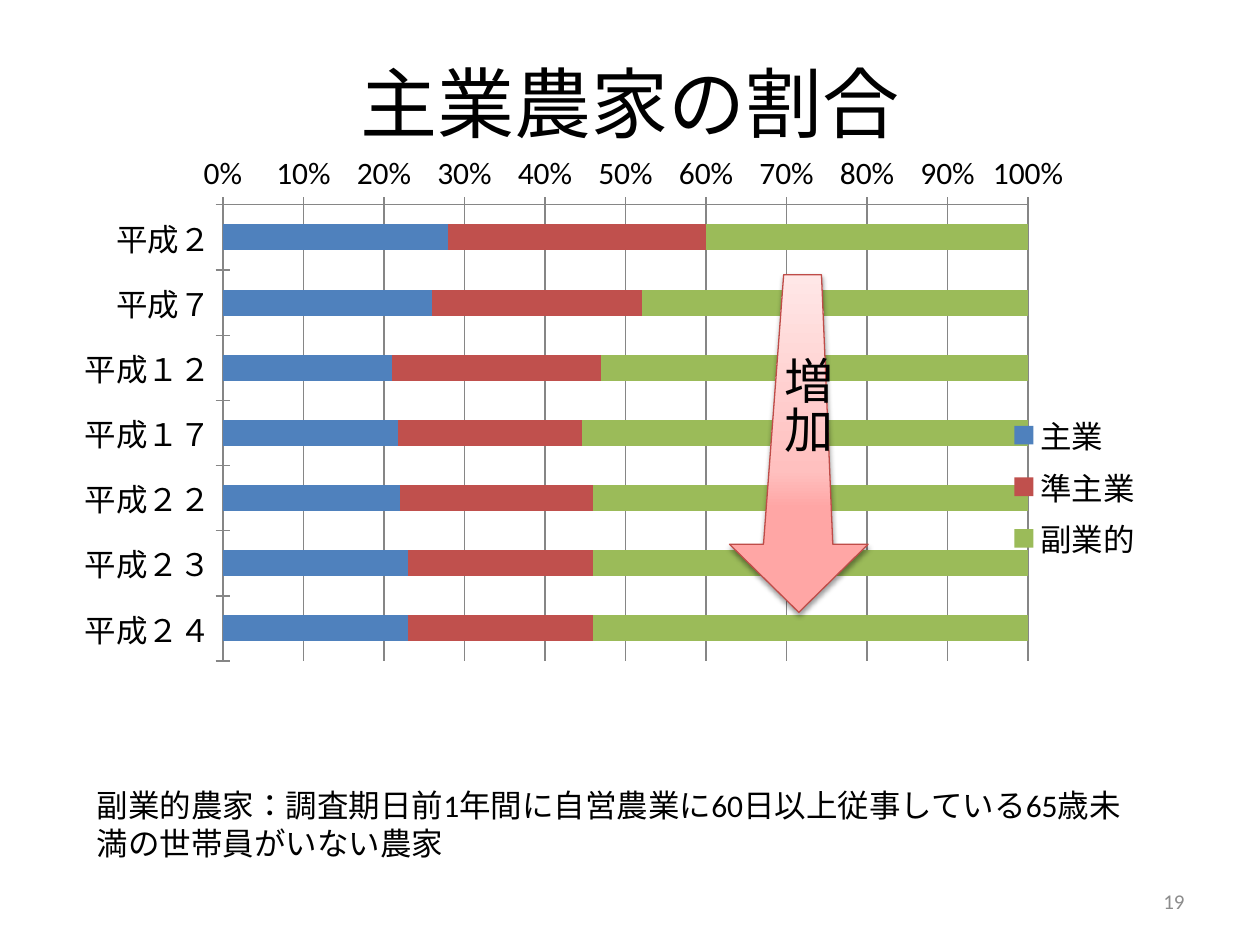
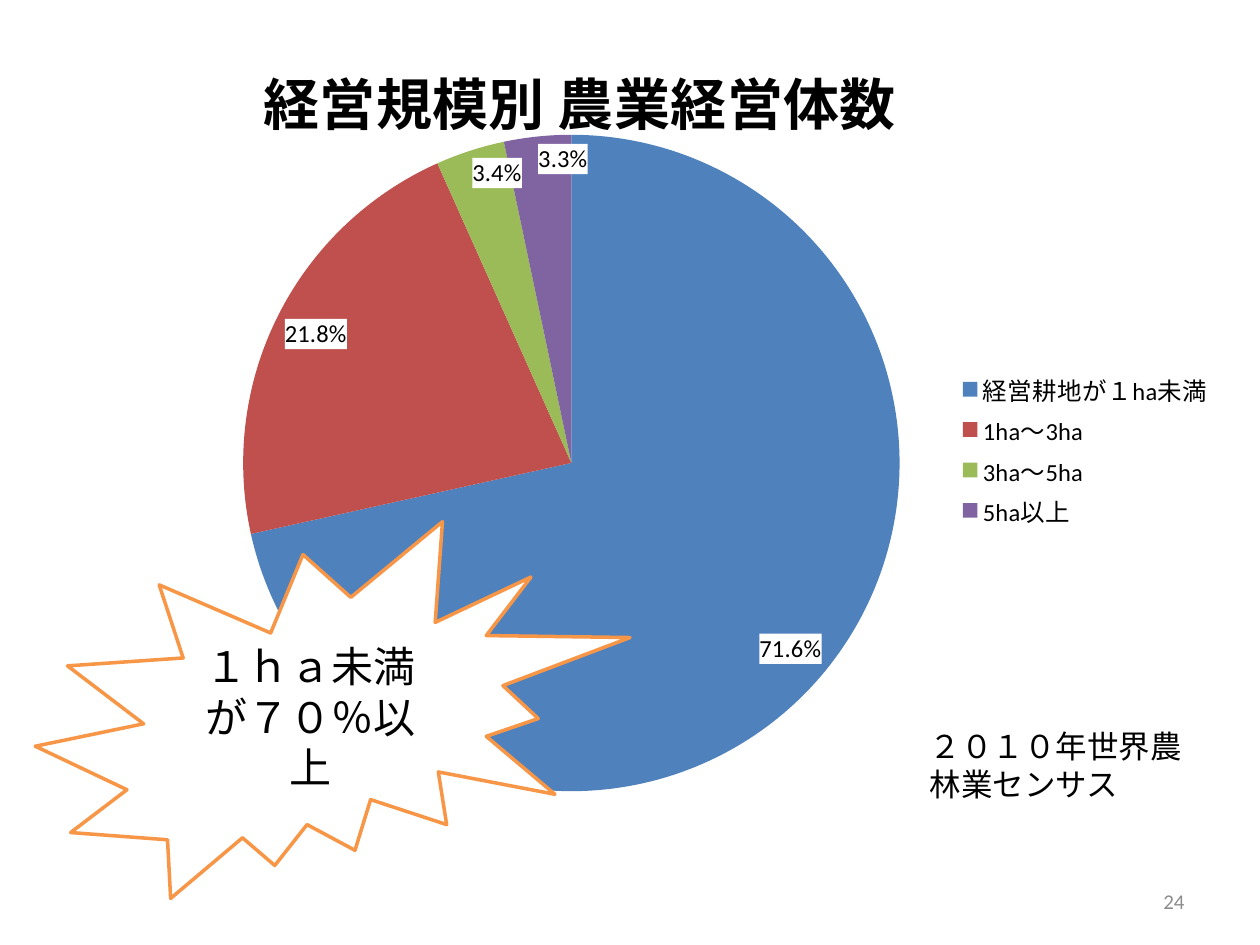
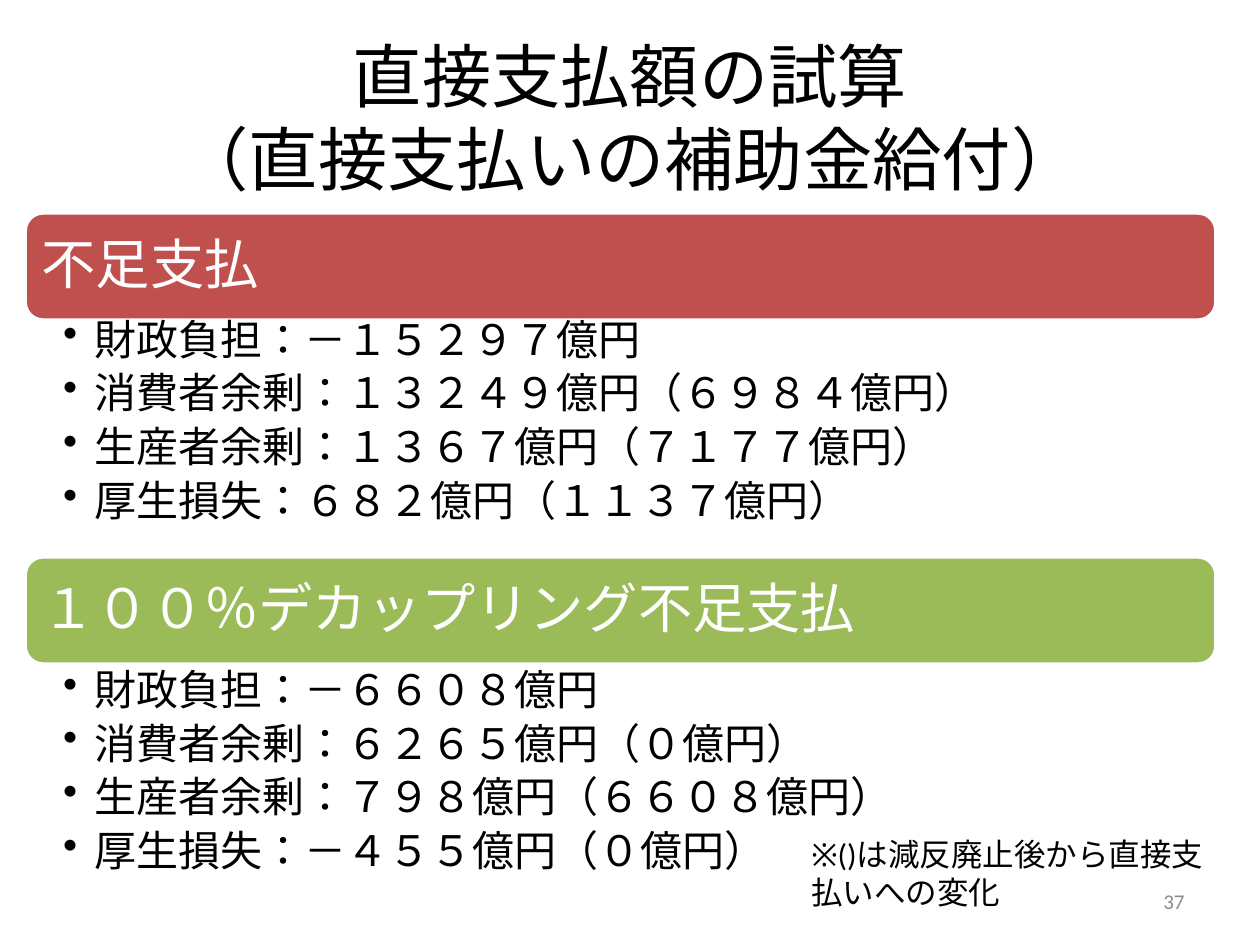
from dataclasses import dataclass

from lxml import etree
from pptx import Presentation
from pptx import util as u
from pptx.chart.data import CategoryChartData
from pptx.dml.color import RGBColor
from pptx.enum import chart as charts, lang, shapes, text
from pptx.oxml import parse_xml
from pptx.oxml.ns import nsdecls, qn


@dataclass(frozen=True)
class Theme:
    font: str = "Calibri"
    black: str = "000000"
    white: str = "FFFFFF"
    gray: str = "8C8C8C"
    axis: str = "868686"
    blue: str = "4F81BD"
    red: str = "C0504D"
    green: str = "9BBB59"
    purple: str = "8064A2"
    orange: str = "F79646"
    arrow_line: str = "BF4C48"
    arrow_stops: tuple = ((31, "FFA6A5"), (42, "FFC0BF"), (100, "FFE7E7"))
    title: float = 44
    chart_title: float = 32
    heading: float = 31
    callout: float = 28
    body: float = 24
    note: float = 18
    label: float = 14
    small: float = 12


THEME = Theme()
SERIES_COLORS = (THEME.blue, THEME.red, THEME.green, THEME.purple)


def color(value):
    return RGBColor.from_string(value)


def inches(box):
    return [u.Inches(value) for value in box]


def style_font(font, size, value=THEME.black):
    font.name, font.size = THEME.font, u.Pt(size)
    font.color.rgb = color(value)
    font.language_id = lang.MSO_LANGUAGE_ID.JAPANESE


def write(shape, lines, size, value=THEME.black, align=text.PP_ALIGN.LEFT,
          anchor=text.MSO_ANCHOR.TOP, insets=None, spacing=None):
    """Fill a shape with one paragraph per line."""
    frame = shape.text_frame
    frame.word_wrap, frame.vertical_anchor = True, anchor
    if insets:
        (frame.margin_left, frame.margin_top,
         frame.margin_right, frame.margin_bottom) = inches(insets)
    frame.text = "\n".join(lines)
    for paragraph in frame.paragraphs:
        paragraph.alignment = align
        paragraph.line_spacing = spacing
        style_font(paragraph.font, size, value)


def add_text(slide, box, lines, size, **options):
    shape = slide.shapes.add_textbox(*inches(box))
    write(shape, lines, size, **options)
    return shape


def add_panel(slide, kind, box, fill, line):
    shape = slide.shapes.add_shape(kind, *inches(box))
    shape.shadow.inherit = False
    shape.fill.solid()
    shape.fill.fore_color.rgb = color(fill)
    shape.line.color.rgb = color(line)
    shape.line.width = u.Pt(2)
    return shape


def add_title(slide, box, title, size=THEME.title):
    add_text(slide, box, [title], size, anchor=text.MSO_ANCHOR.MIDDLE,
             align=text.PP_ALIGN.CENTER)


def add_page_number(slide, number):
    add_text(slide, (7.17, 6.95, 2.33, 0.4), [str(number)], THEME.small,
             value=THEME.gray, align=text.PP_ALIGN.RIGHT,
             anchor=text.MSO_ANCHOR.MIDDLE)


# Chart helpers

def place(element, part_box, chart_box, inner=False, after=None):
    """Position a chart part, given in inches from the chart's corner."""
    target = '<c:layoutTarget val="inner"/>' if inner else ""
    values = "".join(
        f'<c:{key} val="{length / chart_box[2 + index % 2]}"/>'
        for index, (key, length) in enumerate(zip("xywh", part_box)))
    layout = parse_xml(
        f"<c:layout {nsdecls('c')}><c:manualLayout>{target}"
        f'<c:xMode val="edge"/><c:yMode val="edge"/>{values}'
        "</c:manualLayout></c:layout>")
    old = element.find(qn("c:layout"))
    if old is not None:
        element.remove(old)
    if after:
        element.find(qn(after)).addnext(layout)
    else:
        element.insert(0, layout)


def add_chart(slide, kind, box, categories, series, plot_box, size, legend_size):
    data = CategoryChartData()
    data.categories = categories
    for name, values in series:
        data.add_series(name, values)
    chart = slide.shapes.add_chart(kind, *inches(box), data).chart
    style_font(chart.font, size)
    chart.has_title = False
    chart.has_legend = True
    chart.legend.position = charts.XL_LEGEND_POSITION.RIGHT
    chart.legend.include_in_layout = False
    style_font(chart.legend.font, legend_size)
    plot_area = chart._chartSpace.find(".//" + qn("c:plotArea"))
    place(plot_area, plot_box, box, inner=True)
    return chart


def paint(part, value):
    part.format.fill.solid()
    part.format.fill.fore_color.rgb = color(value)


def add_share_bars(slide, box):
    chart = add_chart(
        slide, charts.XL_CHART_TYPE.BAR_STACKED_100, box,
        ["平成２", "平成７", "平成１２", "平成１７", "平成２２", "平成２３", "平成２４"],
        [("主業", (28, 26, 21, 22, 22, 23, 23)),
         ("準主業", (32, 26, 26, 23, 24, 23, 23)),
         ("副業的", (40, 48, 53, 56, 54, 54, 54))],
        (1.49, 0.34, 6.39, 3.67), THEME.note, THEME.note)
    place(chart.legend._element, (7.69, 1.96), box, after="c:legendPos")
    plot = chart.plots[0]
    plot.vary_by_categories = False
    plot.gap_width, plot.overlap = 150, 100
    for series, value in zip(plot.series, SERIES_COLORS):
        paint(series, value)
    chart.category_axis.reverse_order = True
    value_axis = chart.value_axis
    value_axis.major_unit = 0.1
    value_axis.has_major_gridlines = True
    value_axis.tick_labels.number_format = "0%"
    value_axis.tick_labels.number_format_is_linked = False
    for axis in (chart.category_axis, value_axis):
        axis.major_tick_mark = charts.XL_TICK_MARK.CROSS
        axis.format.line.color.rgb = color(THEME.axis)
    value_axis.major_gridlines.format.line.color.rgb = color(THEME.axis)


def add_size_pie(slide, box):
    chart = add_chart(
        slide, charts.XL_CHART_TYPE.PIE, box,
        ["経営耕地が１ha未満", "1ha～3ha", "3ha～5ha", "5ha以上"],
        [("Series 1", (0.716, 0.218, 0.034, 0.033))],
        (1.73, 1.07, 5.21, 5.21), 10, THEME.label)
    # Title clear of the pie and its labels
    chart.has_title = True
    title = chart.chart_title
    title.text_frame.text = "経営規模別 農業経営体数"
    font = title.text_frame.paragraphs[0].font
    style_font(font, THEME.chart_title)
    font.bold = True
    place(title._element, (1.81, 0.34), box, after="c:tx")
    # Slices
    chart.plots[0].vary_by_categories = True
    series = chart.plots[0].series[0]
    for index, value in enumerate(SERIES_COLORS):
        paint(series.points[index], value)
    # White value labels inside the rim
    labels = series.data_labels
    labels.show_value = True
    labels.number_format, labels.number_format_is_linked = "0.0%", False
    labels.position = charts.XL_LABEL_POSITION.INSIDE_END
    style_font(labels.font, THEME.label)
    labels._element.find(qn("c:numFmt")).addnext(parse_xml(
        f"<c:spPr {nsdecls('c', 'a')}><a:solidFill>"
        f'<a:srgbClr val="{THEME.white}"/></a:solidFill></c:spPr>'))


# Slide parts

def add_growth_arrow(slide, box):
    left, top, width, height = box
    outline = [(0, 2.14), (0.27, 2.14), (0.43, 0), (0.73, 0), (0.82, 2.14),
               (width, 2.14), (width / 2, height)]
    points = [(u.Inches(left + x), u.Inches(top + y)) for x, y in outline]
    builder = slide.shapes.build_freeform(*points[0])
    builder.add_line_segments(points[1:], close=True)
    arrow = builder.convert_to_shape()
    arrow.line.color.rgb = color(THEME.arrow_line)
    arrow.line.width = u.Pt(0.75)
    # Three-stop gradient, running upwards
    arrow.fill.gradient()
    arrow.fill.gradient_angle = 90
    stops = arrow._element.spPr.find(qn("a:gradFill")).find(qn("a:gsLst"))
    for stop in list(stops):
        stops.remove(stop)
    for position, value in THEME.arrow_stops:
        stop = etree.SubElement(stops, qn("a:gs"), pos=str(position * 1000))
        etree.SubElement(stop, qn("a:srgbClr"), val=value)
    # Soft shadow below
    arrow.shadow.inherit = False
    arrow._element.spPr.find(qn("a:effectLst")).append(parse_xml(
        f'<a:outerShdw {nsdecls("a")} blurRad="{u.Pt(3.1)}" dist="{u.Pt(1.6)}" '
        f'dir="5400000" rotWithShape="0"><a:srgbClr val="{THEME.black}">'
        '<a:alpha val="38000"/></a:srgbClr></a:outerShdw>'))
    # Vertical caption
    caption = add_text(slide, (left + 0.23, top + 0.55, 0.67, 1.81),
                       ["増加"], THEME.callout)
    caption.text_frame._txBody.bodyPr.set("vert", "eaVert")


def add_payment_section(slide, box, fill, heading, items, gap=0):
    left, top, width, height = box
    bar = add_panel(slide, shapes.MSO_SHAPE.ROUNDED_RECTANGLE, box, fill, THEME.white)
    write(bar, [heading], THEME.heading, THEME.white, spacing=0.9,
          anchor=text.MSO_ANCHOR.MIDDLE, insets=(0.09, 0.09, 0.09, 0.09))
    body = add_text(slide, (left, top + height + gap, width, 1.93), items,
                    THEME.body, spacing=0.9, insets=(0.3, 0.04, 0.24, 0.04))
    indent = u.Inches(0.25)
    for paragraph in body.text_frame.paragraphs:
        paragraph.space_after = u.Pt(THEME.body * 0.2)
        properties = paragraph._p.get_or_add_pPr()
        properties.set("marL", str(indent))
        properties.set("indent", str(-indent))
        bullet = parse_xml(f'<a:buChar {nsdecls("a")} char="•"/>')
        properties.find(qn("a:spcAft")).addnext(bullet)


# Slides

def build_farm_share(slide):
    add_title(slide, (0.5, 0.3, 9, 1.01), "主業農家の割合")
    add_share_bars(slide, (0.28, 1.23, 9.13, 4.57))
    add_growth_arrow(slide, (5.79, 2.18, 1.1, 2.68))
    add_page_number(slide, 19)
    add_text(slide, (0.67, 6.19, 8.35, 0.71),
             ["副業的農家：調査期日前1年間に自営農業に60日以上従事している65歳未満の世帯員がいない農家"],
             THEME.note)


def build_farm_size(slide):
    add_text(slide, (7.28, 5.72, 2.36, 0.71), ["２０１０年世界農林業センサス"], THEME.note)
    add_size_pie(slide, (0.2, 0, 9.53, 7.14))
    burst = add_panel(slide, shapes.MSO_SHAPE.EXPLOSION2, (0.28, 4.14, 4.72, 2.99),
                      THEME.white, THEME.orange)
    write(burst, ["１ｈａ未満が７０％以上"], THEME.body,
          align=text.PP_ALIGN.CENTER, anchor=text.MSO_ANCHOR.MIDDLE)
    add_page_number(slide, 24)


def build_direct_payment(slide):
    add_title(slide, (0.5, 0.3, 9, 1.25),
              "直接支払額の試算\v（直接支払いの補助金給付）", THEME.title * 0.9)
    add_page_number(slide, 37)
    add_payment_section(
        slide, (0.2, 1.69, 9.45, 0.85), THEME.red, "不足支払",
        ["財政負担：－１５２９７億円",
         "消費者余剰：１３２４９億円（６９８４億円）",
         "生産者余剰：１３６７億円（７１７７億円）",
         "厚生損失：６８２億円（１１３７億円）"], gap=-0.05)
    add_payment_section(
        slide, (0.2, 4.42, 9.45, 0.85), THEME.green, "１００％デカップリング不足支払",
        ["財政負担：－６６０８億円",
         "消費者余剰：６２６５億円（０億円）",
         "生産者余剰：７９８億円（６６０８億円）",
         "厚生損失：－４５５億円（０億円）"])
    add_text(slide, (6.34, 6.58, 3.39, 0.71),
             ["※()は減反廃止後から直接支払いへの変化"], THEME.note)


def main():
    presentation = Presentation()
    presentation.slide_width = u.Inches(10)
    presentation.slide_height = u.Inches(7.5)
    blank = presentation.slide_layouts[6]
    for build in (build_farm_share, build_farm_size, build_direct_payment):
        build(presentation.slides.add_slide(blank))
    presentation.save("out.pptx")


if __name__ == "__main__":
    main()
